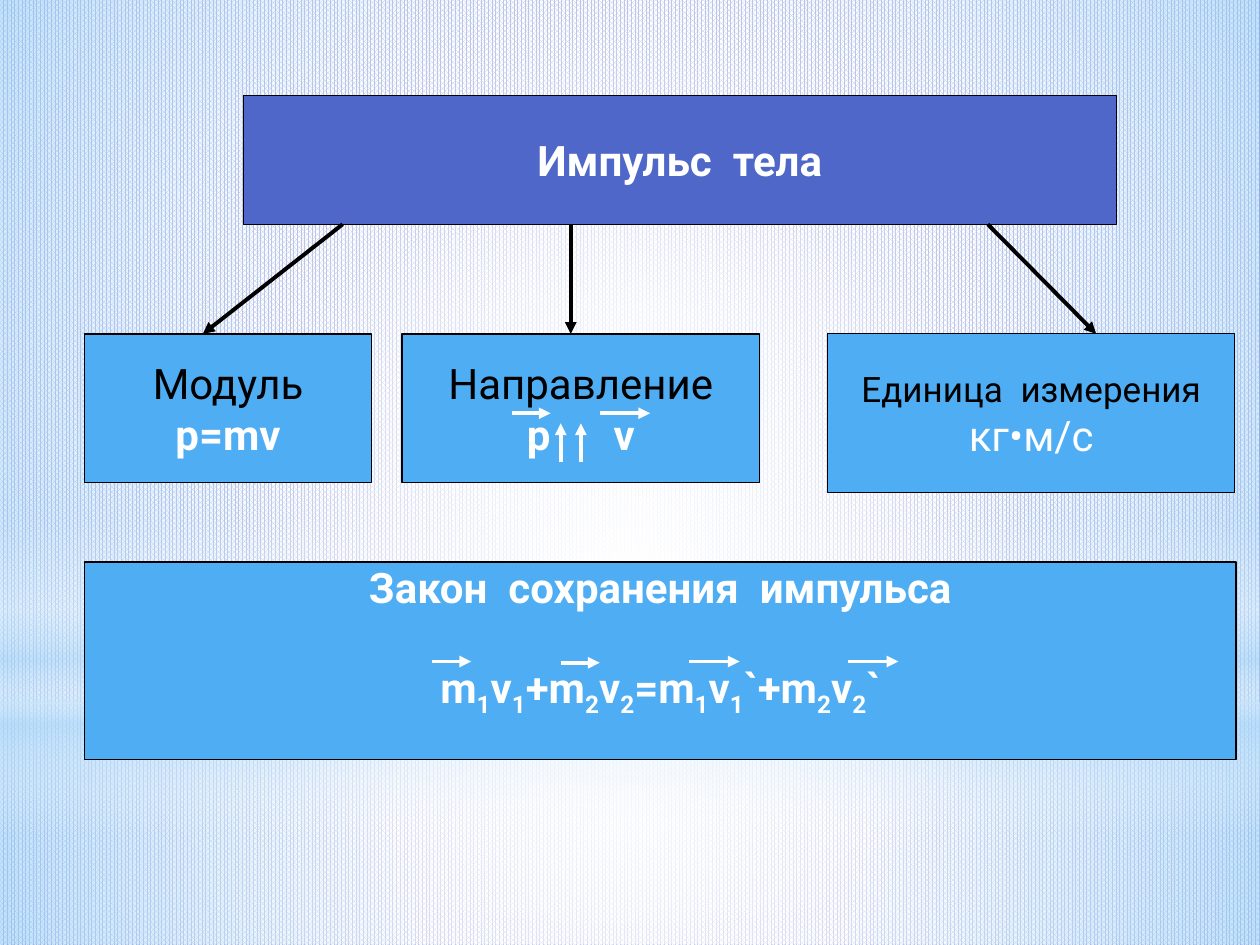
from dataclasses import dataclass
from itertools import groupby

from lxml import etree
from pptx import Presentation
from pptx import util as u
from pptx.dml.color import RGBColor
from pptx.enum import dml, shapes, text
from pptx.oxml.ns import qn


@dataclass(frozen=True)
class Theme:
    font: str = "Roboto"
    indigo: str = "4E67C8"
    blue: str = "4FADF3"
    pale: str = "B4DCFA"
    white: str = "FFFFFF"
    black: str = "000000"
    large: float = 24
    medium: float = 20
    border: float = 0.75
    arrow: float = 2.25


THEME = Theme()


def color(value):
    return RGBColor.from_string(value)


def char_kind(char):
    return "index" if char.isdigit() else "space" if char == " " else "word"


def write(para, content, size=THEME.large, tint=THEME.white, bold=False, gap=0, before=0):
    para.alignment = text.PP_ALIGN.CENTER
    para.space_before = u.Pt(before)
    for kind, chars in groupby(content, char_kind):
        span = para.add_run()
        span.text = "".join(chars)
        span.font.name = THEME.font
        span.font.size = u.Pt(size)
        span.font.bold = bold
        span.font.color.rgb = color(tint)
        if kind == "index":
            span.font._element.set("baseline", "-25000")
        elif kind == "space" and gap:
            span.font._element.set("spc", str(gap * 100))


class Board:
    def __init__(self, theme):
        self.theme = theme
        self.deck = Presentation()
        self.deck.slide_width = u.Inches(10)
        self.deck.slide_height = u.Inches(7.5)
        self.page = self.deck.slides.add_slide(self.deck.slide_layouts[5])

    def backdrop(self):
        fill = self.page.background.fill
        fill.patterned()
        fill.pattern = dml.MSO_PATTERN.PERCENT_80
        fill.fore_color.rgb = color(self.theme.indigo)
        fill.back_color.rgb = color(self.theme.white)

    def glow(self, top, height, stops, kind=shapes.MSO_SHAPE.RECTANGLE, linear=False):
        shape = self.page.shapes.add_shape(
            kind, 0, u.Inches(top), self.deck.slide_width, u.Inches(height))
        shape.shadow.inherit = False
        shape.line.fill.background()
        shape.fill.background()
        gradient = etree.Element(qn("a:gradFill"), rotWithShape="1")
        stop_list = etree.SubElement(gradient, qn("a:gsLst"))
        for position, tint, opacity in stops:
            stop = etree.SubElement(stop_list, qn("a:gs"), pos=str(position * 1000))
            paint = etree.SubElement(stop, qn("a:srgbClr"), val=tint)
            etree.SubElement(paint, qn("a:alpha"), val=str(opacity * 1000))
        if linear:
            etree.SubElement(gradient, qn("a:lin"), ang="5400000", scaled="0")
        else:
            center = etree.SubElement(gradient, qn("a:path"), path="circle")
            etree.SubElement(center, qn("a:fillToRect"), l="50000", t="50000", r="50000", b="50000")
        properties = shape._element.spPr
        properties.replace(properties.find(qn("a:noFill")), gradient)

    def dress(self, box, tint, lines):
        box.fill.solid()
        box.fill.fore_color.rgb = color(tint)
        box.line.color.rgb = color(self.theme.black)
        box.line.width = u.Pt(self.theme.border)
        frame = box.text_frame
        frame.auto_size = text.MSO_AUTO_SIZE.NONE
        frame.word_wrap = False
        frame.vertical_anchor = text.MSO_ANCHOR.MIDDLE
        for index, (content, style) in enumerate(lines):
            para = frame.add_paragraph() if index else frame.paragraphs[0]
            write(para, content, **style)
        return frame

    def heading(self, left, top, width, height, content, **style):
        box = self.page.shapes.title
        box.left, box.top = u.Inches(left), u.Inches(top)
        box.width, box.height = u.Inches(width), u.Inches(height)
        self.dress(box, self.theme.indigo, [(content, style)])
        self.page.shapes._spTree.append(box._element)

    def panel(self, left, top, width, height, *lines):
        box = self.page.shapes.add_shape(
            shapes.MSO_SHAPE.RECTANGLE, u.Inches(left), u.Inches(top),
            u.Inches(width), u.Inches(height))
        box.shadow.inherit = False
        return self.dress(box, self.theme.blue, lines)

    def arrow(self, start, end, tint):
        line = self.page.shapes.add_connector(
            shapes.MSO_CONNECTOR.STRAIGHT, *map(u.Inches, (*start, *end)))
        line.line.color.rgb = color(tint)
        line.line.width = u.Pt(self.theme.arrow)
        properties = line._element.spPr
        etree.SubElement(properties.find(qn("a:ln")), qn("a:tailEnd"), type="triangle")
        etree.SubElement(properties, qn("a:effectLst"))

    def vector(self, left, top, length):
        self.arrow((left, top), (left + length, top), self.theme.white)


def main():
    board = Board(THEME)
    white, pale, black = THEME.white, THEME.pale, THEME.black

    board.backdrop()
    board.glow(5.58, 1.92, [(0, white, 91), (37, white, 76), (100, pale, 79)])
    board.glow(0, 5.58, [(0, white, 89), (48, white, 62), (100, pale, 79)])
    board.glow(4.12, 2.5, [(0, white, 0), (29, white, 30), (45, pale, 40),
                           (55, white, 26), (65, pale, 60), (100, white, 0)], linear=True)
    board.glow(1.75, 5.58, [(0, white, 100), (56, white, 0)], kind=shapes.MSO_SHAPE.OVAL)

    heading_bottom, row_top = 1.78, 2.65
    board.heading(1.93, 0.76, 6.93, 1.02, "Импульс тела", bold=True, gap=6)
    for start, end in ((2.72, 1.61), (4.53, 4.53), (7.84, 8.7)):
        board.arrow((start, heading_bottom), (end, row_top), black)

    board.panel(0.67, row_top, 2.28, 1.18,
                ("Модуль", dict(tint=black)), ("p=mv", dict(bold=True)))
    board.panel(3.19, row_top, 2.84, 1.18,
                ("Направление", dict(tint=black)), ("p v", dict(bold=True, gap=30)))
    board.panel(6.57, row_top, 3.23, 1.26,
                ("Единица измерения", dict(size=THEME.medium, tint=black, gap=5)),
                ("кг•м/с", {}))
    law = board.panel(0.67, 4.46, 9.14, 1.57,
                      ("Закон сохранения импульса", dict(bold=True, gap=6)),
                      ("m1v1+m2v2=m1v1`+m2v2`", dict(bold=True, before=28)))
    law.vertical_anchor = text.MSO_ANCHOR.TOP
    law.margin_top = 0

    board.vector(4.06, 3.28, 0.31)
    board.vector(4.76, 3.28, 0.4)
    for left in (4.45, 4.61):
        board.arrow((left, 3.67), (left, 3.36), white)
    for left, top, length in ((3.43, 5.25, 0.31), (4.45, 5.26, 0.31),
                              (5.47, 5.25, 0.4), (6.73, 5.25, 0.4)):
        board.vector(left, top, length)

    board.deck.save("out.pptx")


if __name__ == "__main__":
    main()
